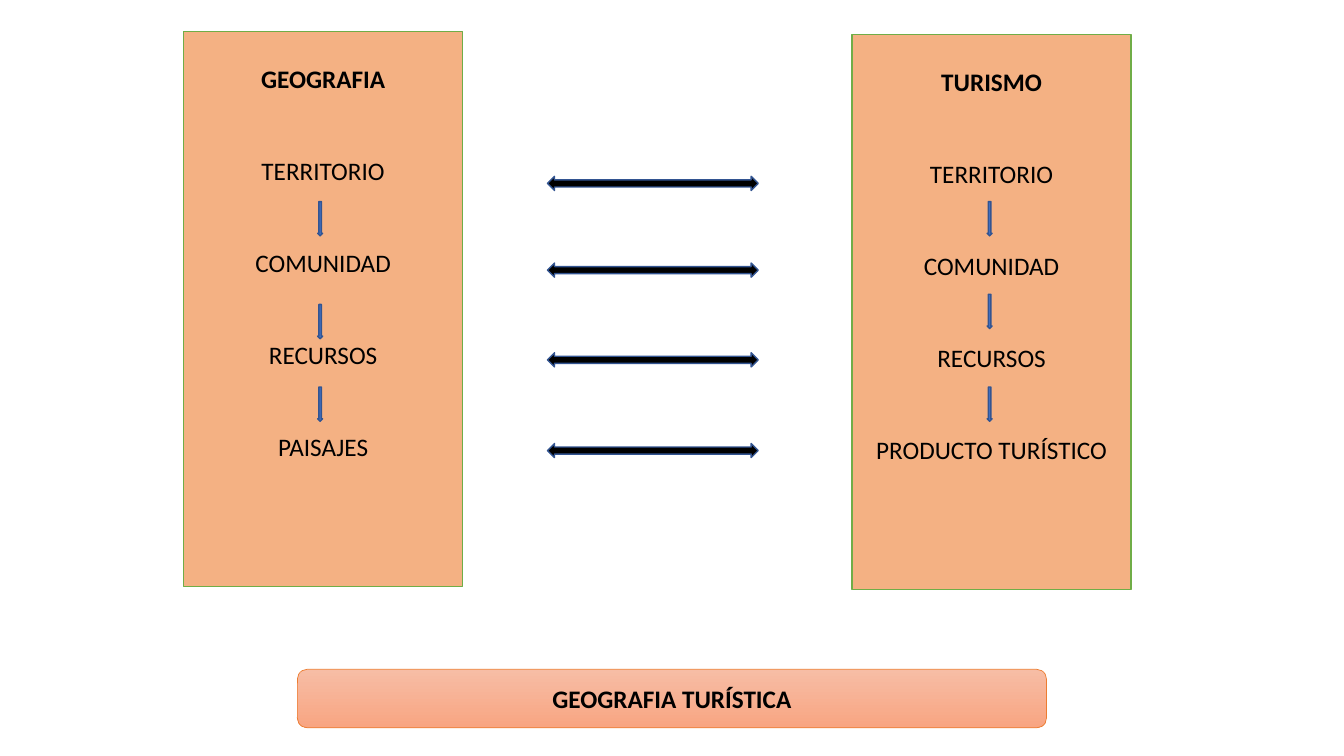
"""Build a slide relating geography and tourism."""
from dataclasses import dataclass

from pptx import Presentation
from pptx.dml.color import RGBColor
from pptx.enum import shapes, text
from pptx.util import Inches, Pt


@dataclass(frozen=True)
class Theme:
    """Colours and type sizes of the slide."""
    panel: str = "F4B183"
    panel_line: str = "70AD47"
    link: str = "000000"
    step: str = "4472C4"
    arrow_line: str = "325491"
    banner_top: str = "F7BDA5"
    banner_bottom: str = "F8A582"
    banner_line: str = "ED7D31"
    ink: str = "000000"
    font: str = "Calibri"
    size: int = 18
    row_gap: int = 44


THEME = Theme()
SHAPE = shapes.MSO_SHAPE


def add_box(page, kind, place, fill, line, width=1):
    """Add a preset shape with a solid fill and an outline."""
    box = page.shapes.add_shape(kind, *(Inches(value) for value in place))
    box.shadow.inherit = False
    box.fill.solid()
    box.fill.fore_color.rgb = RGBColor.from_string(fill)
    box.line.color.rgb = RGBColor.from_string(line)
    box.line.width = Pt(width)
    return box


def write_line(para, words, bold):
    """Write one centred line into a paragraph."""
    para.alignment = text.PP_ALIGN.CENTER
    span = para.add_run()
    span.text = words
    formats = {"name": THEME.font, "size": Pt(THEME.size), "bold": bold}
    for key, value in formats.items():
        setattr(span.font, key, value)
    span.font.color.rgb = RGBColor.from_string(THEME.ink)


def add_panel(page, left, top, title, concepts):
    """Add a tall panel with a bold title above its concepts."""
    box = add_box(page, SHAPE.RECTANGLE, (left, top, 2.77, 5.51), THEME.panel, THEME.panel_line)
    frame = box.text_frame
    frame.word_wrap = True
    frame.vertical_anchor = text.MSO_ANCHOR.TOP
    frame.margin_top = Inches(0.32)
    write_line(frame.paragraphs[0], title, True)
    for concept in concepts:
        para = frame.add_paragraph()
        para.space_before = Pt(THEME.row_gap)
        write_line(para, concept, False)


def add_link(page, top):
    """Add a double arrow between the two panels."""
    add_box(page, SHAPE.LEFT_RIGHT_ARROW, (5.43, top, 2.09, 0.14), THEME.link, THEME.arrow_line)


def add_step(page, left, top):
    """Add a small arrow leading down to the next concept."""
    add_box(page, SHAPE.DOWN_ARROW, (left, top, 0.05, 0.34), THEME.step, THEME.arrow_line)


def add_banner(page, words):
    """Add the rounded gradient banner at the foot."""
    box = add_box(page, SHAPE.ROUNDED_RECTANGLE, (2.95, 6.64, 7.43, 0.58),
                  THEME.banner_top, THEME.banner_line, 0.5)
    box.fill.gradient()
    box.fill.gradient_angle = 270
    for stop, colour in zip(box.fill.gradient_stops, (THEME.banner_top, THEME.banner_bottom)):
        stop.color.rgb = RGBColor.from_string(colour)
    box.text_frame.word_wrap = True
    box.text_frame.vertical_anchor = text.MSO_ANCHOR.MIDDLE
    write_line(box.text_frame.paragraphs[0], words, True)


def main():
    """Build the deck and save it."""
    deck = Presentation()
    deck.slide_width, deck.slide_height = Inches(13.33), Inches(7.5)
    page = deck.slides.add_slide(deck.slide_layouts[6])
    shared = ["TERRITORIO", "COMUNIDAD", "RECURSOS"]
    add_panel(page, 1.82, 0.31, "GEOGRAFIA", shared + ["PAISAJES"])
    add_panel(page, 8.45, 0.34, "TURISMO", shared + ["PRODUCTO TURÍSTICO"])
    for top in (1.75, 2.61, 3.5, 4.4):
        add_link(page, top)
    add_banner(page, "GEOGRAFIA TURÍSTICA")
    for left, tops in ((3.15, (2, 3.02, 3.84)), (9.79, (2, 2.92, 3.84))):
        for top in tops:
            add_step(page, left, top)
    deck.save("out.pptx")


if __name__ == "__main__":
    main()
